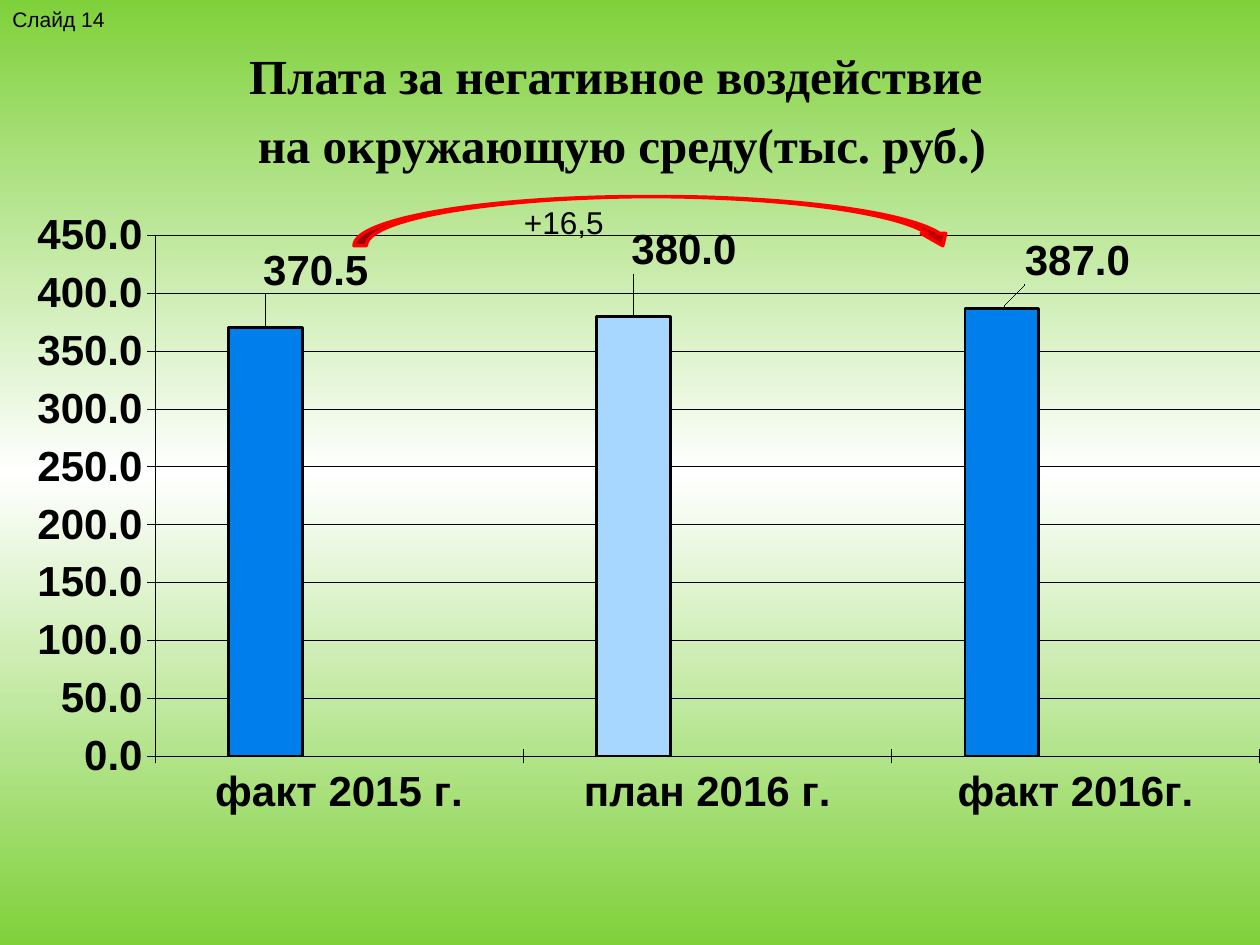
import copy

import pptx
import pptx.chart.data
import pptx.dml.color
import pptx.enum.chart
import pptx.enum.text
import pptx.enum.shapes
import pptx.oxml
import pptx.oxml.ns
import pptx.util

Inches, Pt = pptx.util.Inches, pptx.util.Pt
RGB = pptx.dml.color.RGBColor
GREEN, WHITE, BLACK = RGB(0x7F, 0xD1, 0x3B), RGB(255, 255, 255), RGB(0, 0, 0)
RED, DARK_RED = RGB(255, 0, 0), RGB(0xC0, 0, 0)
BLUE, PALE_BLUE = RGB(0, 0x7E, 0xEB), RGB(0xA7, 0xD6, 0xFF)
PLUM, CREAM = RGB(0x99, 0x33, 0x66), RGB(0xFF, 0xFF, 0xCC)


def set_font(font, size, bold=False, name="Arial"):
    font.name, font.size, font.bold = name, Pt(size), bold
    font.color.rgb = BLACK


def layout_xml(**values):
    """Manual chart layout, given as shares of the chart's size."""
    items = "".join(f'<c:{k} val="{v}"/>' for k, v in values.items())
    return pptx.oxml.parse_xml(
        f'<c:layout {pptx.oxml.ns.nsdecls("c")}>'
        f"<c:manualLayout>{items}</c:manualLayout></c:layout>")


prs = pptx.Presentation()
prs.slide_width, prs.slide_height = Inches(10), Inches(7.5)
s = prs.slides.add_slide(prs.slide_layouts[5])

# Background: green to white to green, top to bottom
fill = s.background.fill
fill.gradient()
fill.gradient_angle = 90
first, last = fill.gradient_stops
first.color.rgb, first.position = GREEN, 0
last.color.rgb, last.position = GREEN, 1
middle = copy.deepcopy(first._gs)
first._gs.addnext(middle)
fill.gradient_stops[1].color.rgb = WHITE
fill.gradient_stops[1].position = 0.5

# Column chart
cd = pptx.chart.data.CategoryChartData(number_format="#,##0.0")
cd.categories = ["факт 2015 г.", "план 2016 г.", "факт 2016г."]
cd.add_series("Series 1", [370.5, 380, 387])
cd.add_series("Series 2", [None] * 3)
cd.add_series("Series 3", [None] * 3)
chart = s.shapes.add_chart(
    pptx.enum.chart.XL_CHART_TYPE.COLUMN_CLUSTERED,
    0, Inches(0.31), prs.slide_width, Inches(7.42), cd).chart
chart.has_legend = chart.has_title = False
set_font(chart.font, 26.4, True)
chart._chartSpace.chart.addnext(pptx.oxml.parse_xml(
    f'<c:spPr {pptx.oxml.ns.nsdecls("c", "a")}>'
    "<a:noFill/><a:ln><a:noFill/></a:ln></c:spPr>"))
area = chart._chartSpace.chart.plotArea
for old in area.findall(pptx.oxml.ns.qn("c:layout")):
    area.remove(old)
area.insert(0, layout_xml(layoutTarget="inner", xMode="edge", yMode="edge",
                          x=0.123, y=0.21, w=0.877, h=0.557))

# Axes
cat, val = chart.category_axis, chart.value_axis
val.minimum_scale, val.maximum_scale, val.major_unit = 0, 450, 50
val.has_major_gridlines = True
val.tick_labels.number_format = "#,##0.0"
val.tick_labels.number_format_is_linked = False
cat.tick_label_position = pptx.enum.chart.XL_TICK_LABEL_POSITION.LOW
for axis in (cat, val):
    axis.major_tick_mark = pptx.enum.chart.XL_TICK_MARK.CROSS
    set_font(axis.tick_labels.font, 24, True)
for line in (cat.format.line, val.format.line, val.major_gridlines.format.line):
    line.color.rgb, line.width = BLACK, Pt(0.38)

# Columns and their shifted labels
plot = chart.plots[0]
plot.gap_width, plot.overlap, plot.vary_by_categories = 200, 0, False
for series, color in zip(plot.series, (RED, PLUM, CREAM)):
    series.format.fill.solid()
    series.format.fill.fore_color.rgb = color
    series.format.line.color.rgb, series.format.line.width = BLACK, Pt(1.5)
    series.invert_if_negative = False
main = plot.series[0]
labels = main.data_labels
labels.show_value = True
labels.number_format, labels.number_format_is_linked = "#,##0.0", False
set_font(labels.font, 24, True)
shifts = [(0.04, -0.03), (0.04, -0.04), (0.06, -0.02)]
for i, (color, (dx, dy)) in enumerate(zip((BLUE, PALE_BLUE, BLUE), shifts)):
    point = main.points[i]
    point.format.fill.solid()
    point.format.fill.fore_color.rgb = color
    point.format.line.color.rgb, point.format.line.width = BLACK, Pt(1.5)
    set_font(point.data_label.font, 24, True)
    point.data_label.position = pptx.enum.chart.XL_LABEL_POSITION.OUTSIDE_END
    point.data_label._get_or_add_dLbl().insert(1, layout_xml(x=dx, y=dy))

# Title
title = s.shapes.title
title.left, title.top = Inches(0.31), Inches(0.31)
title.width, title.height = Inches(9.25), Inches(1.33)
tf = title.text_frame
tf.text = "Плата за негативное воздействие \nна окружающую среду(тыс. руб.)"
tf.auto_size = pptx.enum.text.MSO_AUTO_SIZE.NONE
tf.vertical_anchor = pptx.enum.text.MSO_ANCHOR.TOP
for p in tf.paragraphs:
    p.alignment = pptx.enum.text.PP_ALIGN.CENTER
    p.space_before = Pt(5.6)
    set_font(p.font, 28, True, "Times New Roman")

# Arrow from the first column to the last
arrow = s.shapes.add_shape(
    pptx.enum.shapes.MSO_SHAPE.CURVED_DOWN_ARROW,
    Inches(2.81), Inches(1.56), Inches(4.77), Inches(0.39))
arrow.shadow.inherit = False
arrow.fill.solid()
arrow.fill.fore_color.rgb = DARK_RED
arrow.line.color.rgb, arrow.line.width = RED, Pt(2)

# Slide number and growth notes
for text, x, y, w, h, size in (("Слайд 14", 0, 0, 0.94, 0.51, 12),
                               ("+16,5", 4.06, 1.56, 0.84, 0.4, 18)):
    box = s.shapes.add_textbox(Inches(x), Inches(y), Inches(w), Inches(h))
    box.text_frame.text = text
    box.text_frame.word_wrap = False
    set_font(box.text_frame.paragraphs[0].font, size)

prs.save("out.pptx")
